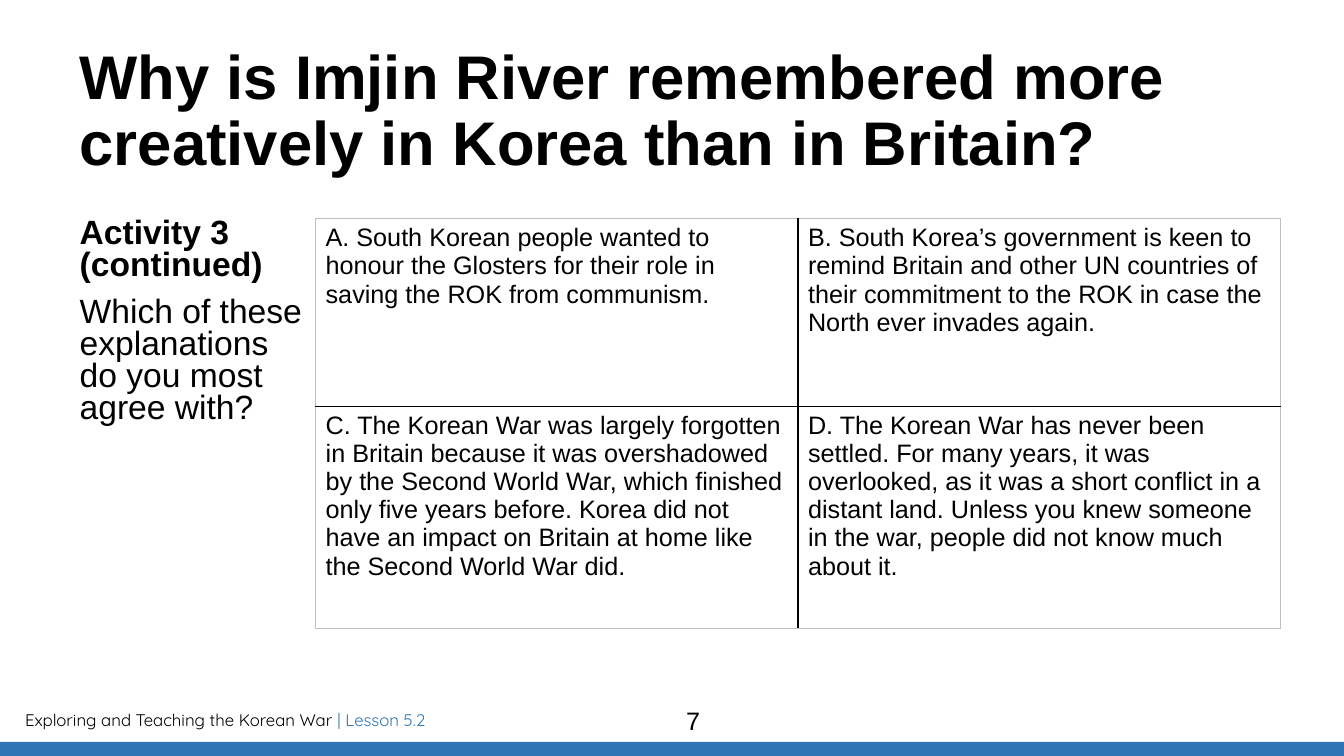
import pptx
import pptx.util
import pptx.dml.color
import pptx.enum.shapes
import pptx.enum.text
import pptx.oxml
import pptx.oxml.ns

Inches, Pt = pptx.util.Inches, pptx.util.Pt
ALIGN, ANCHOR = pptx.enum.text.PP_ALIGN, pptx.enum.text.MSO_ANCHOR
COLORS = {"text": "000000", "accent": "2E75B6", "frame": "BFBFBF"}
EXPLANATIONS = [
    ["A. South Korean people wanted to honour the Glosters for their role in "
     "saving the ROK from communism.",
     "B. South Korea’s government is keen to remind Britain and other UN "
     "countries of their commitment to the ROK in case the North ever invades again."],
    ["C. The Korean War was largely forgotten in Britain because it was "
     "overshadowed by the Second World War, which finished only five years "
     "before. Korea did not have an impact on Britain at home like the Second "
     "World War did.",
     "D. The Korean War has never been settled. For many years, it was "
     "overlooked, as it was a short conflict in a distant land. Unless you knew "
     "someone in the war, people did not know much about it."],
]


def rgb(name):
    return pptx.dml.color.RGBColor.from_string(COLORS[name])


def add_text(p, text, size=18, font="Arial", color="text", bold=False):
    for i, line in enumerate(text.split("\n")):
        if i:
            p.add_line_break()
        r = p.add_run()
        r.text = line
        r.font.size, r.font.name, r.font.bold = Pt(size), font, bold
        r.font.color.rgb = rgb(color)


def place(sp, box):
    sp.left, sp.top, sp.width, sp.height = (Inches(v) for v in box)


def prepare_frame(sp, anchor):
    """Wrapped text frame without margins."""
    tf = sp.text_frame
    tf.word_wrap = True
    tf.auto_size = pptx.enum.text.MSO_AUTO_SIZE.NONE
    tf.vertical_anchor = anchor
    tf.margin_left = tf.margin_top = tf.margin_right = tf.margin_bottom = 0
    return tf


def add_title(slide, box):
    sp = slide.shapes.title
    place(sp, box)
    p = prepare_frame(sp, ANCHOR.MIDDLE).paragraphs[0]
    p.alignment, p.line_spacing = ALIGN.LEFT, 0.9
    add_text(p, "Why is Imjin River remembered more creatively in Korea than in Britain?",
             size=44, bold=True)


def add_activity(slide, box):
    sp = slide.placeholders[1]
    place(sp, box)
    tf = prepare_frame(sp, ANCHOR.TOP)
    lines = [("Activity 3 (continued)", True),
             ("Which of these explanations \ndo you most \nagree with?", False)]
    for i, (text, bold) in enumerate(lines):
        p = tf.add_paragraph() if i else tf.paragraphs[0]
        p.line_spacing, p.space_before = 0.8, Pt(10 if i else 0)
        pPr = p._p.get_or_add_pPr()
        pPr.set("marL", "0")
        pPr.set("indent", "0")
        pPr.append(pptx.oxml.parse_xml(
            f'<a:buNone {pptx.oxml.ns.nsdecls("a")}/>'))
        add_text(p, text, size=24, bold=bold)


def set_border(cell, side, color, width):
    cell._tc.get_or_add_tcPr().append(pptx.oxml.parse_xml(
        f'<a:ln{side} {pptx.oxml.ns.nsdecls("a")} w="{Pt(width)}">'
        f'<a:solidFill><a:srgbClr val="{COLORS[color]}"/></a:solidFill></a:ln{side}>'))


def add_explanations(slide, box, row_heights):
    rows, cols = len(EXPLANATIONS), len(EXPLANATIONS[0])
    frame = slide.shapes.add_table(rows, cols, *(Inches(v) for v in box))
    table = frame.table
    table.first_row = table.horz_banding = False
    for row, height in zip(table.rows, row_heights):
        row.height = Inches(height)
    for i, texts in enumerate(EXPLANATIONS):
        for j, text in enumerate(texts):
            cell = table.cell(i, j)
            outer = {"L": j == 0, "R": j == cols - 1, "T": i == 0, "B": i == rows - 1}
            for side, is_outer in outer.items():
                if is_outer:
                    set_border(cell, side, "frame", 0.5)
                else:
                    set_border(cell, side, "text", 1.5 if side in "LR" else 1)
            cell.fill.background()
            add_text(cell.text_frame.paragraphs[0], text)


def add_label(slide, box, runs, align=ALIGN.LEFT):
    sp = slide.shapes.add_textbox(*(Inches(v) for v in box))
    sp.text_frame.word_wrap = True
    p = sp.text_frame.paragraphs[0]
    p.alignment = align
    for text, style in runs:
        add_text(p, text, **style)


def add_footer(slide, left, top, width):
    bar = slide.shapes.add_shape(
        pptx.enum.shapes.MSO_SHAPE.RECTANGLE,
        Inches(left), Inches(top + 0.41), Inches(width), Inches(0.15))
    bar.shadow.inherit = False
    bar.fill.solid()
    bar.fill.fore_color.rgb = rgb("accent")
    bar.line.fill.background()
    small = {"size": 12, "font": "Quicksand"}
    add_label(slide, (left + 0.15, top + 0.04, 4.35, 0.3),
              [("Exploring and Teaching the Korean War ", small),
               ("| Lesson 5.2", {**small, "color": "accent"})])
    add_label(slide, (left + 4.34, top, 5.07, 0.4), [("7", {})], ALIGN.CENTER)


def main():
    prs = pptx.Presentation()
    prs.slide_width, prs.slide_height = Inches(13.33), Inches(7.5)
    slide = prs.slides.add_slide(prs.slide_layouts[1])
    add_footer(slide, 0, 6.95, 13.33)
    add_title(slide, (0.79, 0.39, 11.5, 1.45))
    add_activity(slide, (0.79, 2.17, 2.35, 2.14))
    add_explanations(slide, (3.13, 2.17, 9.57, 4.07), (1.86, 2.2))
    prs.save("out.pptx")


if __name__ == "__main__":
    main()
